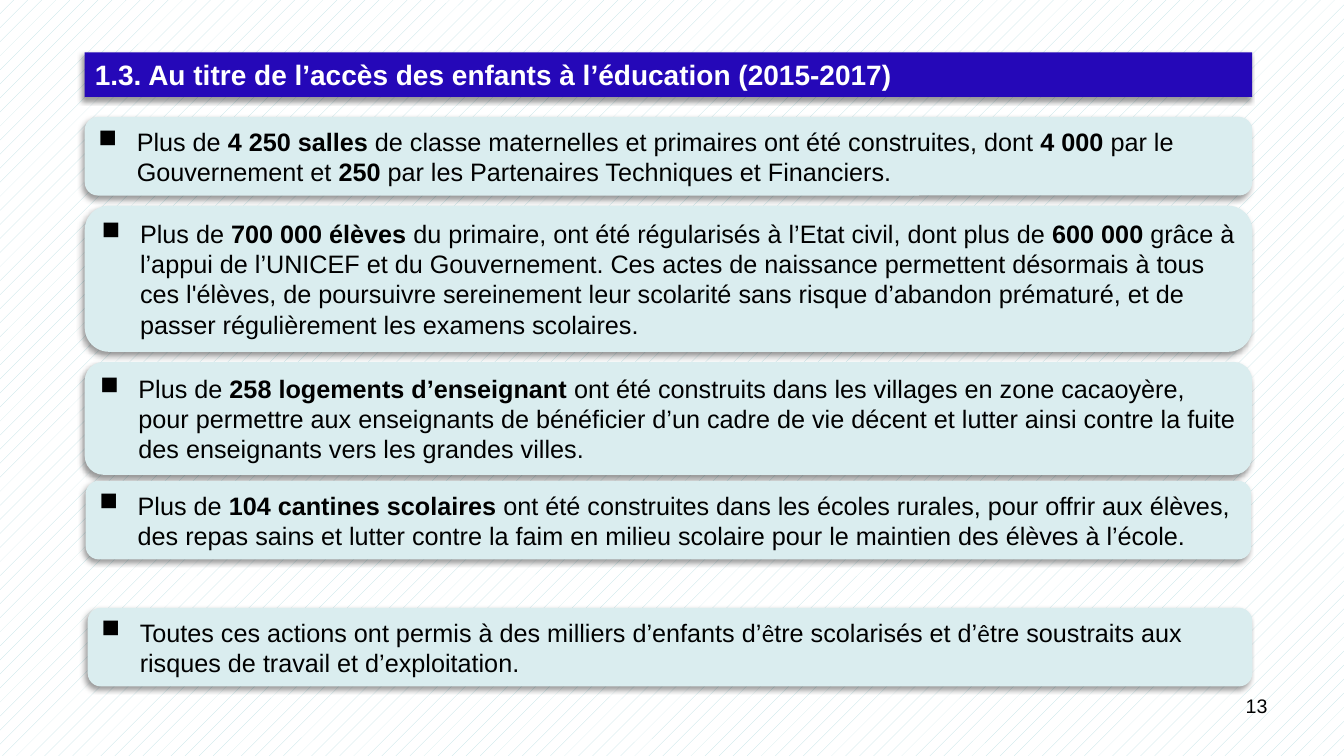
from lxml import etree
from pptx import Presentation
from pptx.dml.color import RGBColor
from pptx.enum.dml import MSO_PATTERN
from pptx.enum.shapes import MSO_SHAPE
from pptx.enum.text import MSO_ANCHOR, PP_ALIGN
from pptx.oxml import parse_xml
from pptx.oxml.ns import qn
from pptx.util import Inches, Pt

ROUNDED = MSO_SHAPE.ROUNDED_RECTANGLE
MIDDLE = MSO_ANCHOR.MIDDLE
LEFT, RIGHT = PP_ALIGN.LEFT, PP_ALIGN.RIGHT
DOTS = MSO_PATTERN.PERCENT_5

BLACK, WHITE, BLUE = "000000", "FFFFFF", "2508B8"
PALE_TEAL, DOT_TEAL = "DAEDEF", "BBE0E3"
SHADOW_XML = (
    '<a:outerShdw xmlns:a="http://schemas.openxmlformats.org/drawingml/2006/main"'
    ' blurRad="50800" dist="38100" dir="8100000" algn="tr" rotWithShape="0">'
    '<a:srgbClr val="000000"><a:alpha val="40000"/></a:srgbClr></a:outerShdw>'
)


def color(hex_string):
    return RGBColor.from_string(hex_string)


def style_panel(shape, fill_color):
    """Give a shape its fill, no outline, a soft shadow and centred text."""
    shape.fill.solid()
    shape.fill.fore_color.rgb = color(fill_color)
    shape.line.fill.background()
    shape.shadow.inherit = False
    effects = shape._element.spPr.find(qn("a:effectLst"))
    effects.append(parse_xml(SHADOW_XML))
    shape.text_frame.word_wrap = True
    shape.text_frame.vertical_anchor = MIDDLE


# Each panel: left, top, width, height, then runs of (text, bold, font name)
PLAIN, BOLD, CALIBRI = (False, "Arial"), (True, "Arial"), (False, "Calibri")
PANELS = [
    (0.84, 1.16, 11.58, 0.78, [
        ("Plus de ", PLAIN), ("4 250 salles ", BOLD),
        ("de classe maternelles et primaires ont été construites, dont ", PLAIN),
        ("4 000 ", BOLD), ("par le Gouvernement et ", PLAIN), ("250 ", BOLD),
        ("par les Partenaires Techniques et Financiers.", PLAIN)]),
    (0.84, 2.04, 11.58, 1.45, [
        ("Plus de ", PLAIN), ("700 000 élèves ", BOLD),
        ("du primaire, ont été régularisés à l’Etat civil, dont plus de ", PLAIN),
        ("600 000 ", BOLD),
        ("grâce à l’appui de l’UNICEF et du Gouvernement. Ces actes de naissance "
         "permettent désormais à tous ces l'élèves, de poursuivre sereinement leur "
         "scolarité sans risque d’abandon prématuré, et de passer régulièrement les "
         "examens scolaires.", PLAIN)]),
    (0.84, 3.59, 11.58, 1.12, [
        ("Plus de ", PLAIN), ("258 logements d’enseignant ", BOLD),
        ("ont été construits dans les villages en zone cacaoyère, pour permettre aux "
         "enseignants de bénéficier d’un cadre de vie décent et lutter ainsi contre "
         "la fuite des enseignants vers les grandes villes.", PLAIN)]),
    (0.85, 4.77, 11.56, 0.78, [
        ("Plus de ", PLAIN), ("104 cantines scolaires ", BOLD),
        ("ont été construites dans les écoles rurales, pour offrir aux élèves, des "
         "repas sains et lutter contre la faim en milieu scolaire pour le maintien "
         "des élèves à l’école.", PLAIN)]),
    (0.87, 6.03, 11.55, 0.78, [
        ("Toutes ces actions ont permis à des milliers d’enfants d’", PLAIN),
        ("ê", CALIBRI), ("tre scolarisés et d’", PLAIN), ("ê", CALIBRI),
        ("tre soustraits aux risques de travail et d’exploitation.", PLAIN)]),
]

presentation = Presentation()
presentation.slide_width = Inches(13.33)
presentation.slide_height = Inches(7.5)
slide = presentation.slides.add_slide(presentation.slide_layouts[5])

background = slide.background.fill
background.patterned()
background.pattern = DOTS
background.fore_color.rgb = color(DOT_TEAL)
background.back_color.rgb = color(WHITE)

title = slide.shapes.title
title.left, title.top = Inches(0.84), Inches(0.52)
title.width, title.height = Inches(11.58), Inches(0.44)
style_panel(title, BLUE)
title.text_frame.text = "1.3. Au titre de l’accès des enfants à l’éducation (2015-2017)"
paragraph = title.text_frame.paragraphs[0]
paragraph.alignment = LEFT
paragraph.font.name = "Arial"
paragraph.font.size = Pt(20)
paragraph.font.bold = True
paragraph.font.color.rgb = color(WHITE)

for left, top, width, height, runs in PANELS:
    panel = slide.shapes.add_shape(
        ROUNDED, Inches(left), Inches(top), Inches(width), Inches(height))
    style_panel(panel, PALE_TEAL)
    paragraph = panel.text_frame.paragraphs[0]
    paragraph.alignment = LEFT
    paragraph.font.size = Pt(18)
    paragraph.font.color.rgb = color(BLACK)
    for text, (bold, font_name) in runs:
        run = paragraph.add_run()
        run.text = text
        run.font.bold = bold
        run.font.name = font_name
        run.font.size = Pt(18)
        run.font.color.rgb = color(BLACK)
    properties = paragraph._p.get_or_add_pPr()
    properties.set("marL", str(Inches(0.38)))
    properties.set("indent", str(Inches(-0.38)))
    bullet = etree.Element(qn("a:buChar"), char="■")
    properties.insert(0, bullet)

number_box = slide.shapes.add_textbox(
    Inches(9.56), Inches(6.83), Inches(3.11), Inches(0.52))
number_box.text_frame.word_wrap = True
number_box.text_frame.text = "13"
paragraph = number_box.text_frame.paragraphs[0]
paragraph.alignment = RIGHT
paragraph.font.name = "Arial"
paragraph.font.size = Pt(14)
paragraph.font.color.rgb = color(BLACK)

presentation.save("out.pptx")
